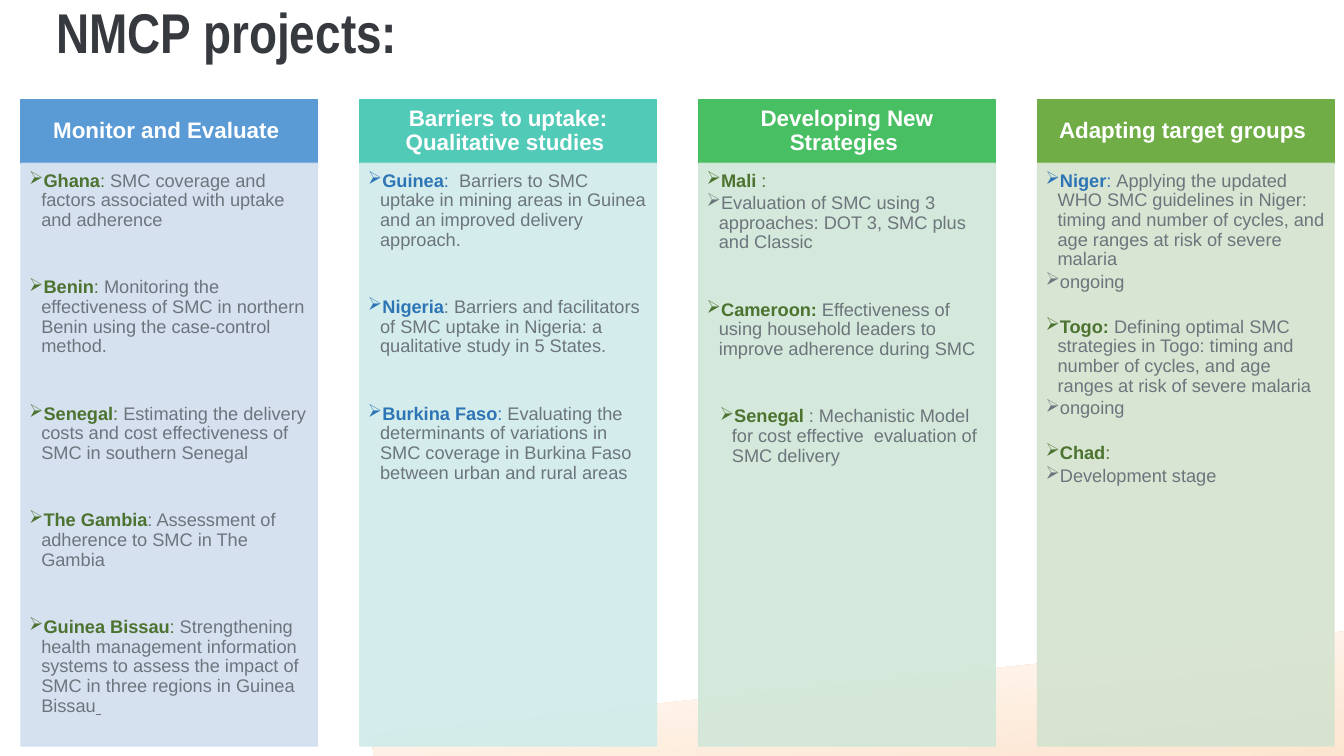
from dataclasses import dataclass

from lxml.etree import SubElement
from pptx import Presentation
from pptx.dml.color import RGBColor
from pptx.enum.shapes import MSO_SHAPE as Form
from pptx.enum.text import MSO_ANCHOR as Anchor, MSO_AUTO_SIZE as Fit, PP_ALIGN as Align
from pptx.oxml import parse_xml
from pptx.oxml.ns import nsdecls, qn
from pptx.util import Pt

PX = 9144
WHITE = RGBColor(0xFF, 0xFF, 0xFF)
INK = RGBColor(0x36, 0x3A, 0x3E)
GREY = RGBColor(0x6C, 0x74, 0x7C)
GREEN = RGBColor(0x4C, 0x73, 0x30)
BLUE = RGBColor(0x2E, 0x75, 0xB6)
SKY = RGBColor(0x5B, 0x9B, 0xD5)
PALE_SKY = RGBColor(0xD2, 0xDE, 0xEF)
TEAL = RGBColor(0x52, 0xCA, 0xB8)
PALE_TEAL = RGBColor(0xD0, 0xEC, 0xEA)
MINT = RGBColor(0x49, 0xBF, 0x64)
PALE_MINT = RGBColor(0xD0, 0xE7, 0xD8)
LEAF = RGBColor(0x70, 0xAD, 0x47)
PALE_LEAF = RGBColor(0xD5, 0xE3, 0xCF)
PEACH = RGBColor(0xFB, 0xD1, 0xAE)
CREAM = RGBColor(0xFC, 0xE0, 0xC8)
TIGHT, SLIM, WIDE = 2, 18, 34


@dataclass
class Item:
    name: str
    mark: str
    body: str
    tint: RGBColor = GREEN
    gap: int = TIGHT
    left: int = 12


COLUMNS = [
    ("Monitor and Evaluate ", SKY, PALE_SKY, [
        Item("Ghana", ": ", "SMC coverage and factors associated with uptake and adherence", gap=WIDE),
        Item("Benin", ": ", "Monitoring the effectiveness of SMC in northern Benin using the case-control method.", gap=WIDE),
        Item("Senegal", ": ", "Estimating the delivery costs and cost effectiveness of SMC in southern Senegal", gap=WIDE),
        Item("The Gambia", "", ": Assessment of adherence to SMC in The Gambia", gap=WIDE),
        Item("Guinea Bissau", ": ", "Strengthening health management information systems to assess "
             "the impact of SMC in three regions in Guinea Bissau"),
    ]),
    ("Barriers to uptake: Qualitative studies ", TEAL, PALE_TEAL, [
        Item("Guinea", ": ", " Barriers to SMC uptake in mining areas in Guinea and an improved delivery approach.", BLUE, WIDE),
        Item("Nigeria", "", ": Barriers and facilitators of SMC uptake in Nigeria: a qualitative study in 5 States.", BLUE, WIDE),
        Item("Burkina Faso", ": ", "Evaluating the determinants of variations in SMC coverage "
             "in Burkina Faso between urban and rural areas", BLUE),
    ]),
    ("Developing New Strategies ", MINT, PALE_MINT, [
        Item("Mali ", ":", ""),
        Item("", "", "Evaluation of SMC using 3 approaches: DOT 3, SMC plus and Classic", gap=WIDE),
        Item("Cameroon: ", "", "Effectiveness of using household leaders to improve adherence during SMC", gap=WIDE),
        Item("Senegal", "", " : Mechanistic Model for cost effective  evaluation of SMC delivery", left=25),
    ]),
    ("Adapting target groups ", LEAF, PALE_LEAF, [
        Item("Niger", ": ", "Applying the updated WHO SMC guidelines in Niger: timing and number of cycles, "
             "and age ranges at risk of severe malaria", BLUE),
        Item("", "", "ongoing", gap=SLIM),
        Item("Togo: ", "", "Defining optimal SMC strategies in Togo: timing and number of cycles, "
             "and age ranges at risk of severe malaria"),
        Item("", "", "ongoing", gap=SLIM),
        Item("Chad", ":", ""),
        Item("", "", "Development stage"),
    ]),
]


def place(shape, x, y, w, h):
    shape.left, shape.top, shape.width, shape.height = [n * PX for n in (x, y, w, h)]


def style(run, size, tint, bold, face="Arial"):
    font = run.font
    font.size, font.name, font.bold = Pt(size), face, bold
    font.color.rgb = tint


def pad(frame, left, top, right, base):
    frame.word_wrap = True
    frame.margin_left, frame.margin_top = left * PX, top * PX
    frame.margin_right, frame.margin_bottom = right * PX, base * PX


def panel(slide, box, tint):
    shape = slide.shapes.add_shape(Form.RECTANGLE, *[n * PX for n in box])
    shape.shadow.inherit = False
    shape.fill.solid()
    shape.fill.fore_color.rgb = tint
    shape.line.color.rgb = tint
    shape.line.width = Pt(1)
    return shape


def fade(shape, share):
    for tint in shape._element.spPr.iter(qn("a:srgbClr")):
        SubElement(tint, qn("a:alpha"), val=str(share * 1000))


def wedge(slide):
    shape = panel(slide, (373, 674, 1025, 143), WHITE)
    shape.line.fill.background()
    shape.rotation = 354
    stops = "".join(
        f'<a:gs pos="{spot * 1000}"><a:srgbClr val="{tint}"/></a:gs>'
        for spot, tint in ((5, PEACH), (25, CREAM), (100, WHITE)))
    blend = parse_xml(
        f'<a:gradFill {nsdecls("a")} rotWithShape="1"><a:gsLst>{stops}</a:gsLst>'
        '<a:lin ang="16200000" scaled="0"/></a:gradFill>')
    props = shape._element.spPr
    props.replace(props.find(qn("a:solidFill")), blend)


def title(slide, text):
    shape = slide.shapes.title
    place(shape, 46, 0, 1125, 107)
    frame = shape.text_frame
    frame.text = text
    frame.auto_size = Fit.NONE
    frame.vertical_anchor = Anchor.TOP
    pad(frame, 10, 5, 10, 5)
    para = frame.paragraphs[0]
    para.alignment = Align.LEFT
    para.line_spacing = 0.9
    style(para.runs[0], 40, INK, True, "Arial Narrow")


def header(slide, x, text, tint):
    frame = panel(slide, (x, 99, 294, 63), tint).text_frame
    frame.text = text
    frame.vertical_anchor = Anchor.MIDDLE
    pad(frame, 12, 7, 12, 7)
    para = frame.paragraphs[0]
    para.alignment = Align.CENTER
    para.line_spacing = 0.9
    style(para.runs[0], 16, WHITE, True)


def bullet(para, item):
    props = para._p.get_or_add_pPr()
    props.set("marL", str(item.left * PX))
    props.set("indent", str(-12 * PX))
    SubElement(props, qn("a:buChar"), char="➢")
    para.alignment = Align.LEFT
    para.line_spacing = 0.9
    para.space_after = Pt(item.gap)
    parts = ((item.name, item.tint, True), (item.mark, item.tint, False), (item.body, GREY, False))
    for text, tint, bold in parts:
        if text:
            run = para.add_run()
            run.text = text
            style(run, 13, tint, bold)


def body(slide, x, tint, items):
    shape = panel(slide, (x, 162, 294, 578), tint)
    fade(shape, 90)
    frame = shape.text_frame
    frame.vertical_anchor = Anchor.TOP
    pad(frame, 8, 8, 10, 11)
    for i, item in enumerate(items):
        bullet(frame.add_paragraph() if i else frame.paragraphs[0], item)
    return frame


def main():
    deck = Presentation()
    deck.slide_width, deck.slide_height = 1333 * PX, 750 * PX
    slide = deck.slides.add_slide(deck.slide_layouts[5])
    wedge(slide)
    title(slide, "NMCP projects:")
    frames = []
    for i, (text, dark, pale, items) in enumerate(COLUMNS):
        x = 21 + 336 * i
        header(slide, x, text, dark)
        frames.append(body(slide, x, pale, items))
    tail = frames[0].paragraphs[-1].add_run()
    tail.text = " "
    style(tail, 13, GREY, False)
    tail.font.underline = True
    deck.save("out.pptx")


if __name__ == "__main__":
    main()
